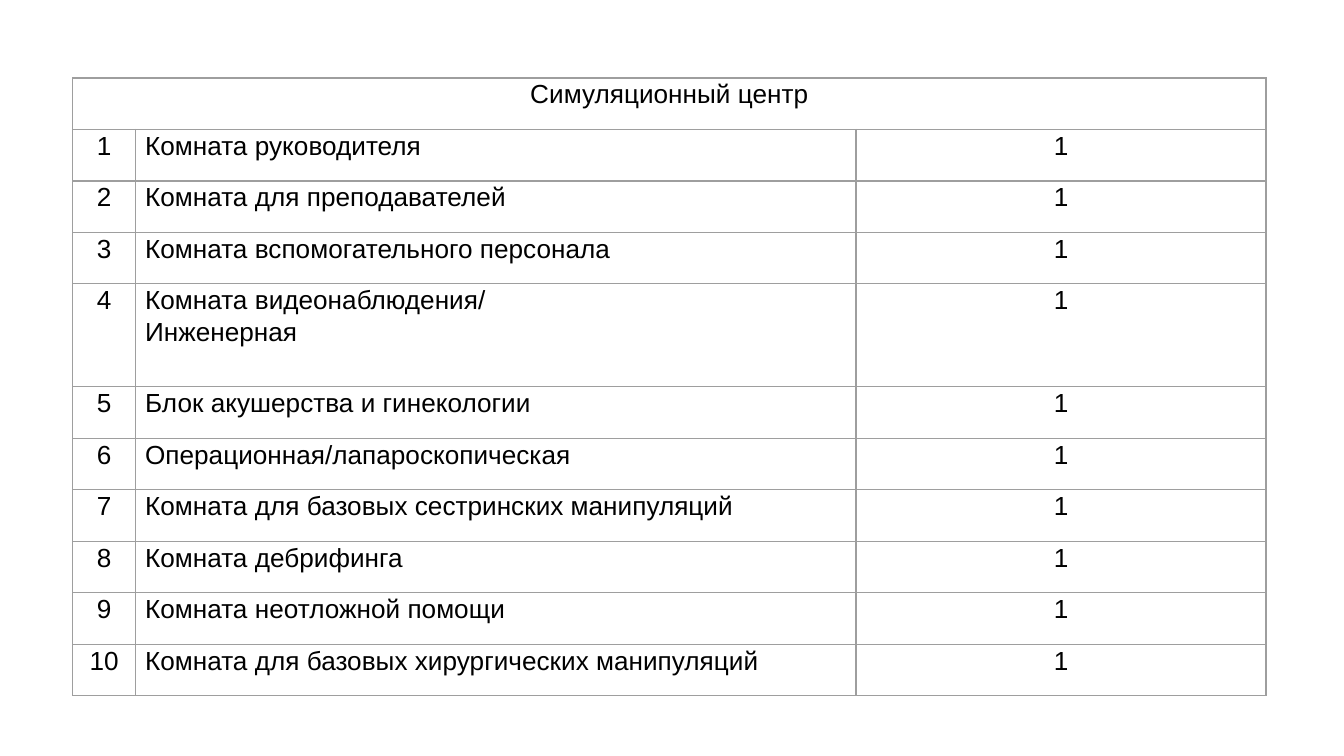
import lxml.etree
import pptx
import pptx.dml.color
import pptx.enum.text
import pptx.oxml.ns
import pptx.util

Inches = pptx.util.Inches
ALIGN = pptx.enum.text.PP_ALIGN

TITLE = "Симуляционный центр"
ROOMS = [
    "Комната руководителя",
    "Комната для преподавателей",
    "Комната вспомогательного персонала",
    "Комната видеонаблюдения/\nИнженерная",
    "Блок акушерства и гинекологии",
    "Операционная/лапароскопическая",
    "Комната для базовых сестринских манипуляций",
    "Комната дебрифинга",
    "Комната неотложной помощи",
    "Комната для базовых хирургических манипуляций",
]
COUNT = "1"
SLIDE_WIDTH = 10
SLIDE_HEIGHT = SLIDE_WIDTH * 9 / 16
COL_WIDTHS = [0.47, 5.36, 3.05]
COL_ALIGNS = [ALIGN.CENTER, ALIGN.LEFT, ALIGN.CENTER]
LEFT, TOP, HEIGHT = 0.54, 0.58, 4.6
FONT_FORMAT = {"name": "Arial", "size": pptx.util.Pt(14), "bold": False}
CELL_FORMAT = {
    "margin_left": Inches(0.07),
    "margin_right": Inches(0.07),
    "margin_top": 0,
    "margin_bottom": 0,
}
PLAIN_TABLE = {"first_row": False, "horz_banding": False}


def apply_format(obj, values):
    for name, value in values.items():
        setattr(obj, name, value)


def color(value):
    return pptx.dml.color.RGBColor.from_string(value)


def add_borders(cell, value, width):
    qn = pptx.oxml.ns.qn
    tc_pr = cell._tc.get_or_add_tcPr()
    for side in ("a:lnL", "a:lnR", "a:lnT", "a:lnB"):
        ln = lxml.etree.SubElement(tc_pr, qn(side), w=str(pptx.util.Pt(width)))
        fill = lxml.etree.SubElement(ln, qn("a:solidFill"))
        lxml.etree.SubElement(fill, qn("a:srgbClr"), val=str(color(value)))


def style_cell(cell):
    apply_format(cell, CELL_FORMAT)
    add_borders(cell, "9E9E9E", 0.75)
    cell.fill.background()


def write_cell(cell, text, align):
    tf = cell.text_frame
    tf.text = text
    for p in tf.paragraphs:
        apply_format(p, {"alignment": align, "line_spacing": 1.07})
        for r in p.runs:
            apply_format(r.font, FONT_FORMAT)
            r.font.color.rgb = color("000000")


def add_room_table(s):
    lines = [1] + [len(room.splitlines()) for room in ROOMS]
    table = s.shapes.add_table(
        len(lines), len(COL_WIDTHS), Inches(LEFT), Inches(TOP),
        Inches(sum(COL_WIDTHS)), Inches(HEIGHT),
    ).table
    apply_format(table, PLAIN_TABLE)
    for col, width in zip(table.columns, COL_WIDTHS):
        col.width = Inches(width)
    for row, count in zip(table.rows, lines):
        row.height = Inches(HEIGHT * count / sum(lines))
    for cell in table.iter_cells():
        style_cell(cell)

    table.cell(0, 0).merge(table.cell(0, len(COL_WIDTHS) - 1))
    write_cell(table.cell(0, 0), TITLE, ALIGN.CENTER)
    for number, room in enumerate(ROOMS, 1):
        values = (str(number), room, COUNT)
        for i, (text, align) in enumerate(zip(values, COL_ALIGNS)):
            write_cell(table.cell(number, i), text, align)


def main():
    prs = pptx.Presentation()
    prs.slide_width = Inches(SLIDE_WIDTH)
    prs.slide_height = Inches(SLIDE_HEIGHT)
    s = prs.slides.add_slide(prs.slide_layouts[6])
    add_room_table(s)
    prs.save("out.pptx")


if __name__ == "__main__":
    main()
